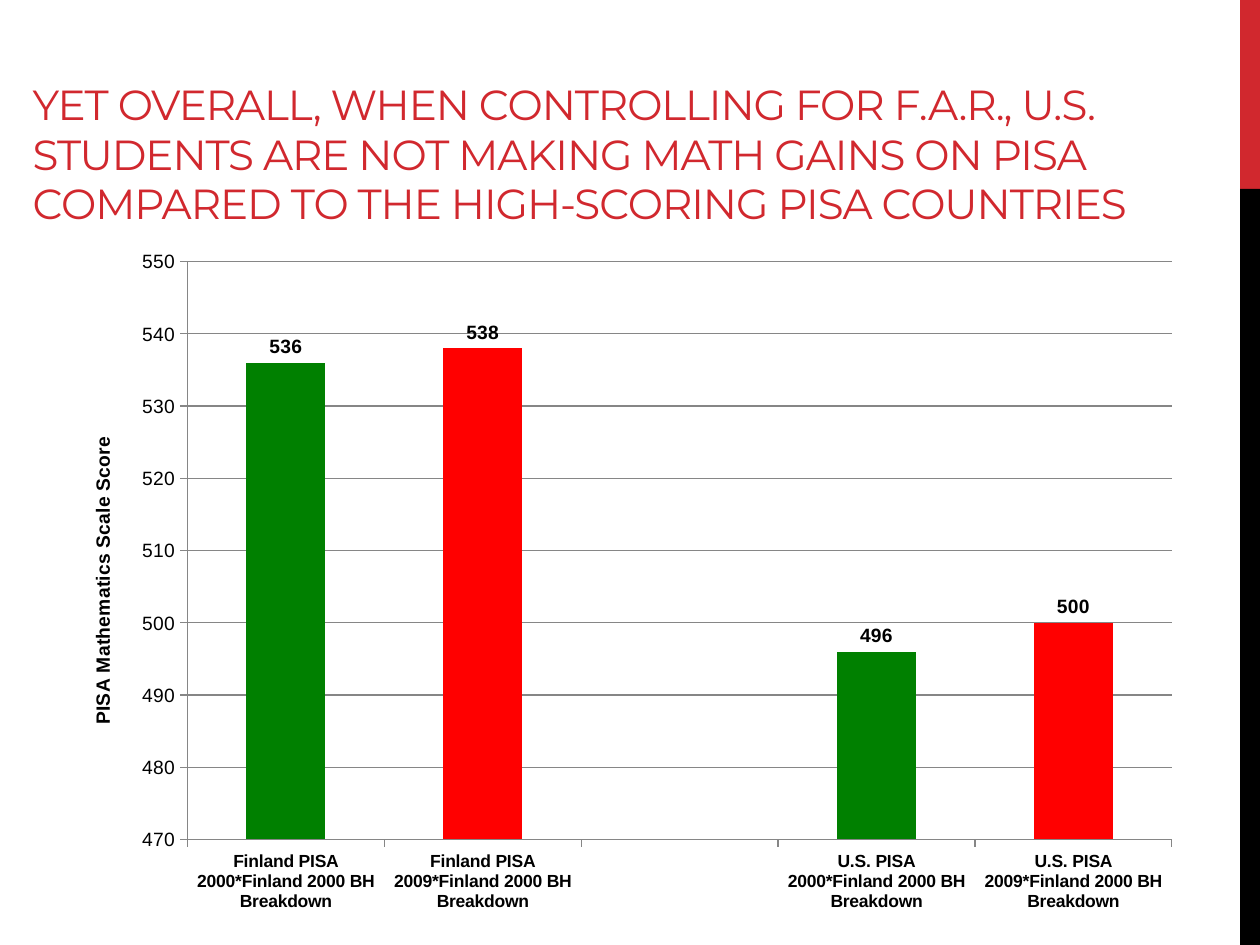
from typing import NamedTuple

from lxml.etree import SubElement
from pptx import Presentation
from pptx.chart.data import CategoryChartData
from pptx.dml.color import RGBColor
from pptx.enum.chart import XL_CHART_TYPE, XL_LABEL_POSITION, XL_TICK_MARK
from pptx.enum.shapes import MSO_SHAPE
from pptx.enum.text import MSO_ANCHOR
from pptx.oxml.ns import qn
from pptx.util import Cm, Pt

COLORS = {
    "accent": "D1282E",
    "black": "000000",
    "grid": "868686",
    "2000": "008000",
    "2009": "FF0000",
}
TITLE = (
    "YET OVERALL, WHEN CONTROLLING FOR F.A.R., U.S. STUDENTS ARE NOT MAKING "
    "MATH GAINS ON PISA COMPARED TO THE HIGH-SCORING PISA COUNTRIES"
)


class Band(NamedTuple):
    top: float
    height: float
    color: str


class Score(NamedTuple):
    country: str
    year: str
    value: int

    @property
    def label(self) -> str:
        return f"{self.country} PISA {self.year}*Finland 2000 BH Breakdown"


BANDS = [Band(0, 3.81, "accent"), Band(3.81, 15.24, "black")]
# None leaves an empty slot between the two countries.
SCORES = [
    Score("Finland", "2000", 536),
    Score("Finland", "2009", 538),
    None,
    Score("U.S.", "2000", 496),
    Score("U.S.", "2009", 500),
]


def rgb(name: str) -> RGBColor:
    return RGBColor.from_string(COLORS[name])


def style_font(font, size: float, bold: bool = False, color: str = "black", name: str = "Arial") -> None:
    font.name = name
    font.size = Pt(size)
    font.bold = bold
    font.color.rgb = rgb(color)


def add_band(slide, band: Band) -> None:
    bar = slide.shapes.add_shape(
        MSO_SHAPE.RECTANGLE, Cm(25), Cm(band.top), Cm(0.4), Cm(band.height)
    )
    bar.shadow.inherit = False
    bar.fill.solid()
    bar.fill.fore_color.rgb = rgb(band.color)
    bar.line.fill.background()


def add_title(slide) -> None:
    frame = slide.shapes.add_textbox(Cm(0.41), Cm(0.43), Cm(24.08), Cm(4.32)).text_frame
    frame.word_wrap = True
    frame.vertical_anchor = MSO_ANCHOR.BOTTOM
    heading = frame.paragraphs[0]
    heading.line_spacing = 0.98
    run = heading.add_run()
    run.text = TITLE
    style_font(heading.font, 24, color="accent", name="Montserrat")
    run.font._element.set("spc", "-60")


def set_plot_area(chart, **fractions: float) -> None:
    """Fix the inner plot area, in fractions of the chart's size."""
    plot_area = chart._chartSpace.chart.plotArea
    layout = plot_area.find(qn("c:layout"))
    if layout is None:
        layout = SubElement(plot_area, qn("c:layout"))
        plot_area.insert(0, layout)
    manual = SubElement(layout, qn("c:manualLayout"))
    settings = {"layoutTarget": "inner", "xMode": "edge", "yMode": "edge", **fractions}
    for tag, value in settings.items():
        SubElement(manual, qn(f"c:{tag}")).set("val", str(value))


def style_axes(chart) -> None:
    categories, values = chart.category_axis, chart.value_axis
    for axis in (categories, values):
        axis.major_tick_mark = XL_TICK_MARK.OUTSIDE
        axis.minor_tick_mark = XL_TICK_MARK.NONE
        axis.format.line.color.rgb = rgb("grid")
    style_font(categories.tick_labels.font, 10, bold=True)
    style_font(values.tick_labels.font, 11)
    values.tick_labels.number_format = "0"
    values.tick_labels.number_format_is_linked = False
    values.minimum_scale, values.maximum_scale, values.major_unit = 470, 550, 10
    values.has_major_gridlines = True
    values.major_gridlines.format.line.color.rgb = rgb("grid")
    caption = values.axis_title.text_frame
    caption.text = "PISA Mathematics Scale Score"
    style_font(caption.paragraphs[0].font, 11, bold=True)


def add_score_chart(slide) -> None:
    data = CategoryChartData(number_format="0")
    data.categories = [score.label if score else "" for score in SCORES]
    data.add_series("Series 1", [score.value if score else None for score in SCORES])
    chart = slide.shapes.add_chart(
        XL_CHART_TYPE.COLUMN_CLUSTERED, Cm(1.27), Cm(4.72), Cm(22.81), Cm(13.87), data
    ).chart
    chart.has_legend = False
    chart.has_title = False
    style_font(chart.font, 10)
    style_axes(chart)
    set_plot_area(chart, x=0.11, y=0.04, w=0.87, h=0.84)

    plot = chart.plots[0]
    plot.gap_width = 150
    plot.vary_by_categories = False
    plot.has_data_labels = True
    labels = plot.data_labels
    labels.show_value = True
    labels.number_format = "0"
    labels.number_format_is_linked = False
    labels.position = XL_LABEL_POSITION.OUTSIDE_END
    style_font(labels.font, 11, bold=True)
    for index, score in enumerate(SCORES):
        if score:
            fill = plot.series[0].points[index].format.fill
            fill.solid()
            fill.fore_color.rgb = rgb(score.year)


def main() -> None:
    deck = Presentation()
    deck.slide_width, deck.slide_height = Cm(25.4), Cm(19.05)
    slide = deck.slides.add_slide(deck.slide_layouts[6])
    for band in BANDS:
        add_band(slide, band)
    add_title(slide)
    add_score_chart(slide)
    deck.save("out.pptx")


if __name__ == "__main__":
    main()
